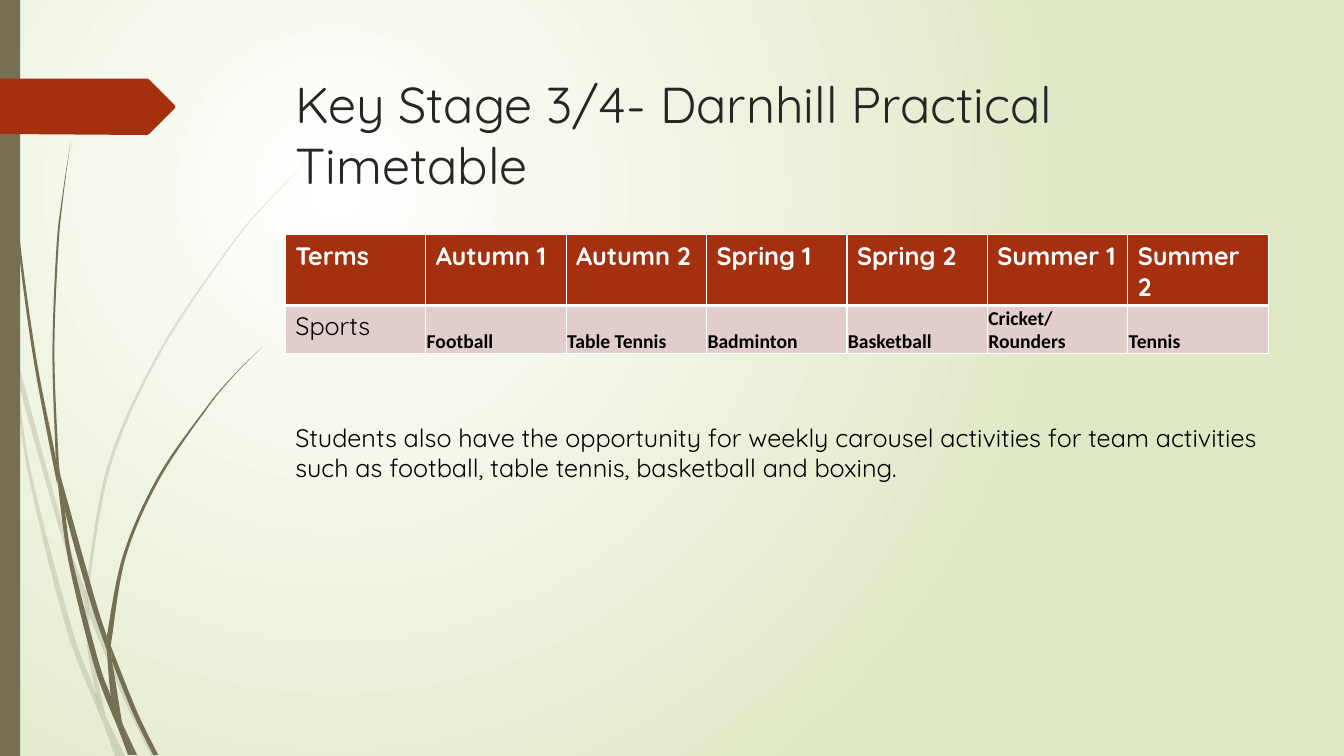
from lxml.etree import SubElement
from pptx import Presentation
from pptx.dml.color import RGBColor
from pptx.enum.shapes import MSO_SHAPE
from pptx.enum.text import MSO_ANCHOR
from pptx.oxml.ns import qn
from pptx.util import Pt

PX = 9144
COLORS = {
    "white": "FFFFFF",
    "sage": "DFE8C4",
    "olive": "766F54",
    "rust": "A53010",
    "rose": "E1CDCC",
    "title": "262626",
    "black": "000000",
}


def write(text_frame, text, size=18, font="Quicksand", color="black", bold=False):
    text_frame.word_wrap = True
    run = text_frame.paragraphs[0].add_run()
    run.text = text
    run.font.size = Pt(size)
    run.font.name = font
    run.font.bold = bold
    run.font.color.rgb = RGBColor.from_string(COLORS[color])


def bend(edge):
    padded = [edge[0], *edge, edge[-1]]
    return [
        (
            (b[0] + (c[0] - a[0]) / 6, b[1] + (c[1] - a[1]) / 6),
            (c[0] - (d[0] - b[0]) / 6, c[1] - (d[1] - b[1]) / 6),
            c,
        )
        for a, b, c, d in zip(padded, padded[1:], padded[2:], padded[3:])
    ]


presentation = Presentation()
presentation.slide_width = 1333 * PX
presentation.slide_height = 750 * PX
slide = presentation.slides.add_slide(presentation.slide_layouts[6])

background = slide.background.fill
background.gradient()
for stop, name in zip(background.gradient_stops, ("white", "sage")):
    stop.color.rgb = RGBColor.from_string(COLORS[name])
gradient = slide.element.find(".//" + qn("a:gradFill"))
gradient.remove(gradient.find(qn("a:lin")))
radial = SubElement(gradient, qn("a:path"))
radial.set("path", "circle")
center = SubElement(radial, qn("a:fillToRect"))
for side, share in (("l", 50), ("t", 50), ("r", 100), ("b", 100)):
    center.set(side, str(share * 1000))

pale_blades = [
    ([(0, 282), (9, 322), (11, 350)], [(10, 344), (0, 299)]),
    ([(14, 345), (62, 520), (85, 586)], [(84, 599), (58, 522), (17, 376)]),
    ([(88, 596), (127, 692), (155, 750)], [(150, 750), (123, 694), (88, 610)]),
    ([(105, 711), (124, 750)], [(119, 750), (105, 711)]),
    ([(11, 350), (17, 376), (31, 469), (70, 619), (93, 683), (101, 714)],
     [(92, 693), (65, 621), (28, 470), (11, 350)]),
    ([(84, 599), (88, 610), (91, 646), (105, 711)],
     [(96, 692), (87, 646), (84, 599)]),
    ([(312, 153), (268, 198), (229, 245), (160, 349), (110, 462), (88, 584), (88, 596)],
     [(85, 586), (85, 584), (107, 461), (158, 348), (228, 244), (268, 197), (312, 153)]),
    ([(101, 714), (119, 750)], [(114, 750), (101, 714)]),
    ([(85, 586), (88, 596), (88, 610)], [(84, 599), (85, 586)]),
    ([(93, 683), (105, 711), (119, 750)], [(101, 714), (93, 683)]),
]
dark_blades = [
    ([(4, 0), (8, 109), (19, 232), (36, 355), (55, 453), (57, 481)],
     [(56, 477), (33, 355), (17, 233), (7, 110), (3, 0)]),
    ([(60, 472), (93, 590), (106, 631)], [(106, 645), (88, 592), (64, 505), (60, 472)]),
    ([(110, 641), (136, 706), (157, 749)], [(152, 749), (132, 708), (111, 656)]),
    ([(57, 477), (64, 505), (72, 556), (98, 657), (110, 691), (117, 722)],
     [(111, 708), (93, 659), (68, 557), (57, 477)]),
    ([(70, 141), (63, 193), (58, 245), (54, 349), (58, 453), (60, 472)],
     [(55, 449), (52, 349), (56, 245), (62, 193), (70, 141)]),
    ([(122, 719), (136, 749)], [(133, 749), (122, 719)]),
    ([(55, 449), (60, 472), (64, 505)], [(57, 477), (55, 449)]),
    ([(260, 344), (231, 374), (205, 406), (158, 476), (125, 552), (111, 633), (110, 641)],
     [(106, 631), (122, 551), (156, 474), (204, 405), (231, 373), (260, 344)]),
    ([(117, 722), (131, 749)], [(127, 749), (117, 722)]),
    ([(106, 645), (111, 656), (121, 716), (122, 719)],
     [(116, 706), (110, 691), (106, 645)]),
    ([(106, 631), (110, 641), (111, 656)], [(106, 645), (106, 631)]),
    ([(110, 691), (122, 719), (133, 749)], [(130, 749), (117, 722), (110, 691)]),
]
for blades, opacity in ((pale_blades, 20), (dark_blades, 100)):
    grass = slide.shapes.add_group_shape()
    for front_edge, back_edge in blades:
        segments = bend(front_edge) + [(back_edge[0],)] + bend(back_edge)
        start_x, start_y = front_edge[0]
        builder = grass.shapes.build_freeform(start_x * PX, start_y * PX)
        builder.add_line_segments(
            [(segment[-1][0] * PX, segment[-1][1] * PX) for segment in segments], close=True
        )
        blade = builder.convert_to_shape()
        left = min(x for x, y in front_edge + back_edge)
        top = min(y for x, y in front_edge + back_edge)
        for curve, segment in zip(blade.element.findall(".//" + qn("a:lnTo")), segments):
            if len(segment) == 3:
                curve.tag = qn("a:cubicBezTo")
                for position, (x, y) in enumerate(segment[:2]):
                    control = SubElement(curve, qn("a:pt"))
                    control.set("x", str(round((x - left) * PX)))
                    control.set("y", str(round((y - top) * PX)))
                    curve.insert(position, control)
        blade.shadow.inherit = False
        blade.line.fill.background()
        blade.fill.solid()
        blade.fill.fore_color.rgb = RGBColor.from_string(COLORS["olive"])
        if opacity < 100:
            color = blade.element.spPr.find(qn("a:solidFill"))[0]
            SubElement(color, qn("a:alpha")).set("val", str(opacity * 1000))

side_bar = slide.shapes.add_shape(MSO_SHAPE.RECTANGLE, 0, 0, 20 * PX, 750 * PX)
builder = slide.shapes.build_freeform(0, 78, scale=PX)
builder.add_line_segments(
    [(146, 78), (148, 79), (173, 104), (174, 106), (173, 108), (148, 133), (146, 134), (0, 133)],
    close=True,
)
page_tag = builder.convert_to_shape()
for shape, name in ((side_bar, "olive"), (page_tag, "rust")):
    shape.shadow.inherit = False
    shape.line.fill.background()
    shape.fill.solid()
    shape.fill.fore_color.rgb = RGBColor.from_string(COLORS[name])

title = slide.shapes.add_textbox(283 * PX, 68 * PX, 975 * PX, 140 * PX)
write(title.text_frame, "Key Stage 3/4- Darnhill Practical Timetable", size=36, color="title")

timetable = [
    ["Terms", "Autumn 1", "Autumn 2", "Spring 1", "Spring 2", "Summer 1", "Summer 2"],
    ["Sports", "Football", "Table Tennis", "Badminton", "Basketball", "Cricket/ Rounders", "Tennis"],
]
table_frame = slide.shapes.add_table(2, 7, 283 * PX, 233 * PX, 975 * PX, 82 * PX)
table_frame.height = 118 * PX
table = table_frame.table
for row, texts in enumerate(timetable):
    for column, text in enumerate(texts):
        cell = table.cell(row, column)
        if row == 0:
            write(cell.text_frame, text, color="white", bold=True)
        elif column == 0:
            write(cell.text_frame, text)
        else:
            write(cell.text_frame, text, size=14, font="Calibri", bold=True)
            cell.vertical_anchor = MSO_ANCHOR.BOTTOM
            cell.margin_left = cell.margin_right = cell.margin_top = PX
            cell.margin_bottom = 0
        heavy_side = "a:lnB" if row == 0 else "a:lnT"
        for side in ("a:lnL", "a:lnR", "a:lnT", "a:lnB"):
            border = SubElement(cell._tc.get_or_add_tcPr(), qn(side))
            border.set("w", str(Pt(3 if side == heavy_side else 1)))
            border_fill = SubElement(border, qn("a:solidFill"))
            SubElement(border_fill, qn("a:srgbClr")).set("val", COLORS["white"])
        cell.fill.solid()
        cell.fill.fore_color.rgb = RGBColor.from_string(COLORS["rust" if row == 0 else "rose"])

carousel_note = slide.shapes.add_textbox(283 * PX, 414 * PX, 975 * PX, 71 * PX)
write(
    carousel_note.text_frame,
    "Students also have the opportunity for weekly carousel activities for team activities "
    "such as football, table tennis, basketball and boxing.",
)

presentation.save("out.pptx")
